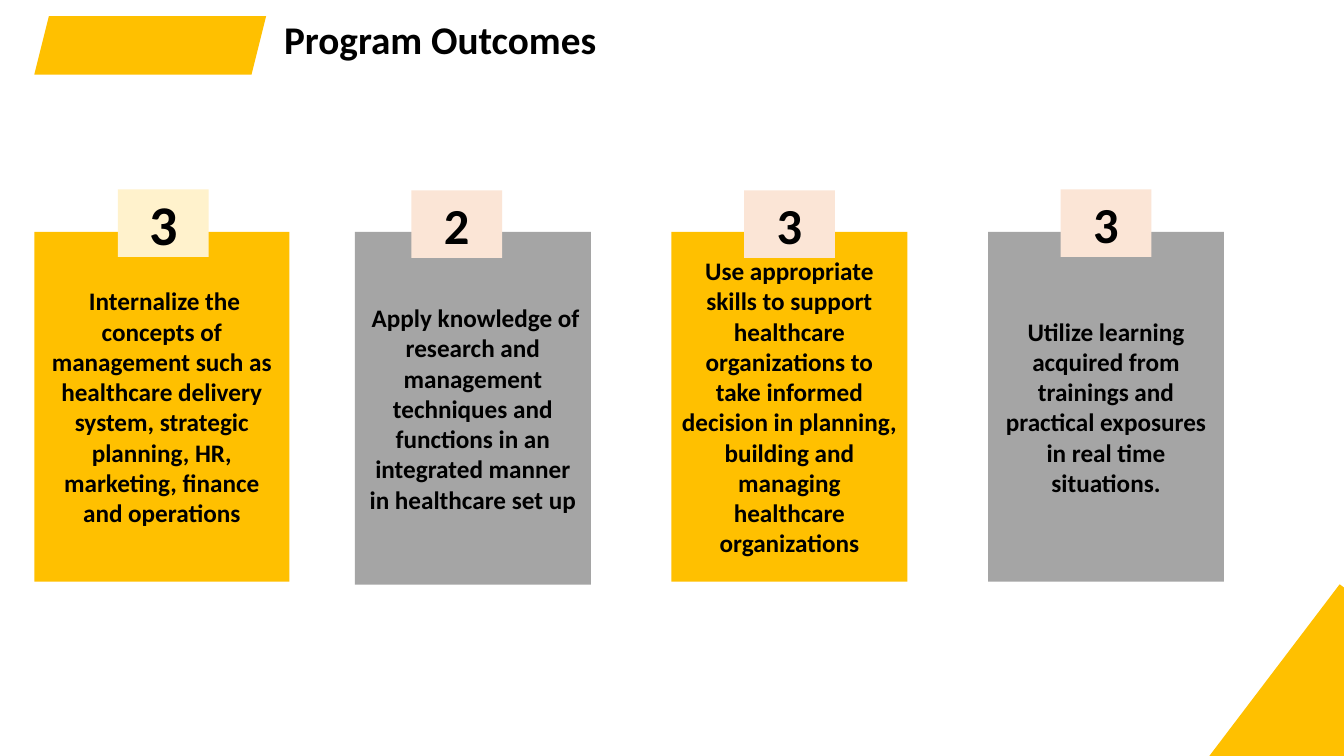
from pptx import Presentation
from pptx.dml.color import RGBColor
from pptx.enum.shapes import MSO_SHAPE
from pptx.enum.text import MSO_ANCHOR, PP_ALIGN
from pptx.util import Inches, Pt

COLORS = {
    "gold": "FFC000",
    "gray": "A5A5A5",
    "cream": "FFF2CC",
    "peach": "FBE5D6",
    "text": "000000",
}
FONT = "Calibri"
TITLE = "Program Outcomes"

# text, card fill, (left, width, height), number, badge fill, badge (left, top), number size
OUTCOMES = [
    (" Internalize the concepts of management such as healthcare delivery system, "
     "strategic planning, HR, marketing, finance and operations",
     "gold", (0.34, 2.53, 3.47), "3", "cream", (1.17, 1.88), 40),
    (" Apply knowledge of research and management techniques and functions in an "
     "integrated manner in healthcare set up",
     "gray", (3.52, 2.34, 3.5), "2", "peach", (4.08, 1.89), 36),
    ("Use appropriate skills to support healthcare organizations to take informed "
     "decision in planning, building and managing healthcare organizations",
     "gold", (6.66, 2.34, 3.47), "3", "peach", (7.38, 1.89), 36),
    ("Utilize learning acquired from trainings and practical exposures in real time "
     "situations.",
     "gray", (9.8, 2.34, 3.47), "3", "peach", (10.52, 1.88), 36),
]
CARD_TOP = 2.3
BADGE_W, BADGE_H = 0.9, 0.67


def write(sp, text, size):
    tf = sp.text_frame
    tf.word_wrap = True
    p = tf.paragraphs[0]
    p.text = text
    p.font.name = FONT
    p.font.size = Pt(size)
    p.font.bold = True
    p.font.color.rgb = RGBColor.from_string(COLORS["text"])
    return p


def add_block(slide, kind, box, fill):
    sp = slide.shapes.add_shape(kind, *map(Inches, box))
    sp.shadow.inherit = False
    sp.fill.solid()
    sp.fill.fore_color.rgb = RGBColor.from_string(COLORS[fill])
    sp.line.fill.background()
    return sp


def add_label(slide, box, fill, text, size):
    """Add a filled rectangle with bold text centred both ways."""
    sp = add_block(slide, MSO_SHAPE.RECTANGLE, box, fill)
    sp.text_frame.vertical_anchor = MSO_ANCHOR.MIDDLE
    write(sp, text, size).alignment = PP_ALIGN.CENTER


def main():
    prs = Presentation()
    prs.slide_width, prs.slide_height = Inches(13.33), Inches(7.5)
    slide = prs.slides.add_slide(prs.slide_layouts[6])

    title = slide.shapes.add_textbox(Inches(2.72), Inches(0.16), Inches(10.38), Inches(0.58))
    write(title, TITLE, 28).line_spacing = 0.9
    add_block(slide, MSO_SHAPE.PARALLELOGRAM, (0.34, 0.16, 2.3, 0.58), "gold")

    for text, fill, (left, width, height), *_ in OUTCOMES:
        add_label(slide, (left, CARD_TOP, width, height), fill, text, 18)
    for *_, number, fill, (left, top), size in OUTCOMES:
        add_label(slide, (left, top, BADGE_W, BADGE_H), fill, number, size)

    corner = add_block(slide, MSO_SHAPE.RECTANGLE, (12.32, 6.01, 1.6, 2.66), "gold")
    corner.rotation = 37.2

    prs.save("out.pptx")


if __name__ == "__main__":
    main()
